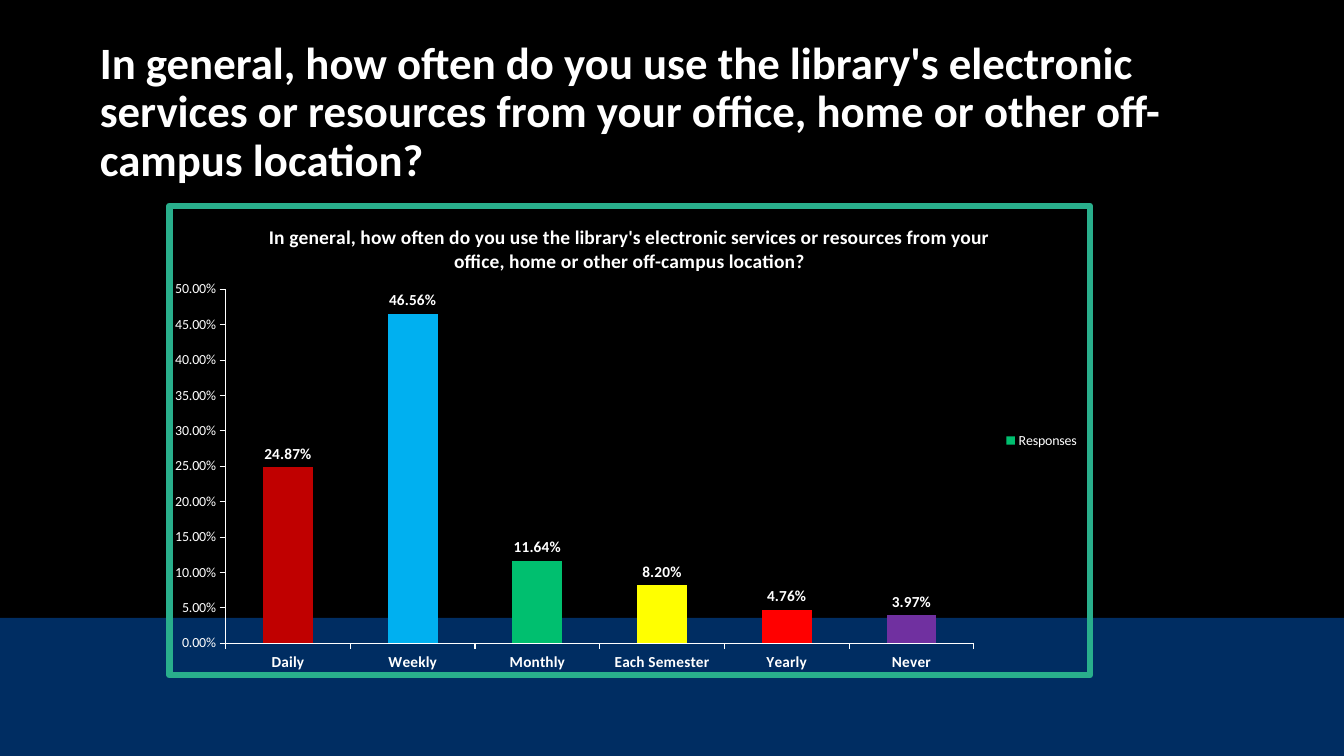
"""Build the library survey slide: a question and a column chart of the responses."""
from lxml import etree
from pptx import Presentation
from pptx import util as u
from pptx.chart.data import CategoryChartData
from pptx.dml.color import RGBColor
from pptx.enum import chart as ch, shapes, text
from pptx.oxml import parse_xml
from pptx.oxml.ns import nsdecls, qn


def paint(fill, color):
    fill.solid()
    fill.fore_color.rgb = RGBColor.from_string(color)


def style(font, size, bold):
    font.name = "Calibri"
    font.size = u.Pt(size)
    font.bold = bold
    paint(font.fill, WHITE)


WHITE = "FFFFFF"
QUESTION = ("In general, how often do you use the library's electronic services "
            "or resources from your office, home or other off-campus location?")
ANSWERS = [
    ("Daily", 0.2487, "C00000"),
    ("Weekly", 0.4656, "00B0F0"),
    ("Monthly", 0.1164, "00BF6F"),
    ("Each Semester", 0.082, "FFFF00"),
    ("Yearly", 0.0476, "FF0000"),
    ("Never", 0.0397, "7030A0"),
]

deck = Presentation()
deck.slide_width, deck.slide_height = u.Inches(13.33), u.Inches(7.5)
slide = deck.slides.add_slide(deck.slide_layouts[5])
paint(slide.background.fill, "000000")

band = slide.shapes.add_shape(shapes.MSO_SHAPE.RECTANGLE, 0, u.Inches(6.13),
                              deck.slide_width, u.Inches(1.37))
band.shadow.inherit = False
paint(band.fill, "002D62")
band.line.fill.background()

heading = slide.shapes.title
heading.left, heading.top = u.Inches(0.89), u.Inches(0.4)
heading.width, heading.height = u.Inches(11.53), u.Inches(1.45)
heading.text_frame.text = QUESTION
heading.text_frame.auto_size = text.MSO_AUTO_SIZE.NONE
heading.text_frame.vertical_anchor = text.MSO_ANCHOR.MIDDLE
question = heading.text_frame.paragraphs[0]
question.alignment = text.PP_ALIGN.LEFT
question.line_spacing = 0.9
style(question.font, 32, True)

survey = CategoryChartData(number_format="0.00%")
survey.categories = [answer for answer, share, color in ANSWERS]
survey.add_series("Responses", [share for answer, share, color in ANSWERS])
chart = slide.shapes.add_chart(
    ch.XL_CHART_TYPE.COLUMN_CLUSTERED, u.Inches(1.65), u.Inches(2.01),
    u.Inches(9.19), u.Inches(4.72), survey).chart
style(chart.font, 10, False)

chart.has_title = True
chart.chart_title.include_in_layout = False
chart.chart_title.text_frame.text = QUESTION
style(chart.chart_title.text_frame.paragraphs[0].font, 14, True)

chart.has_legend = True
chart.legend.position = ch.XL_LEGEND_POSITION.RIGHT
chart.legend.include_in_layout = False
style(chart.legend.font, 10, False)

frequency, share_axis = chart.category_axis, chart.value_axis
for axis, size, bold in ((frequency, 11, True), (share_axis, 10, False)):
    axis.has_major_gridlines = False
    axis.major_tick_mark = ch.XL_TICK_MARK.OUTSIDE
    axis.minor_tick_mark = ch.XL_TICK_MARK.NONE
    axis.format.line.width = u.Pt(0.75)
    paint(axis.format.line.fill, WHITE)
    style(axis.tick_labels.font, size, bold)
share_axis.minimum_scale, share_axis.maximum_scale = 0, 0.5
share_axis.major_unit = 0.05
share_axis.tick_labels.number_format = "0.00%"
share_axis.tick_labels.number_format_is_linked = False

columns = chart.plots[0]
columns.gap_width = 150
columns.vary_by_categories = False
responses = columns.series[0]
paint(responses.format.fill, "00BF6F")
for index, (answer, share, color) in enumerate(ANSWERS):
    paint(responses.points[index].format.fill, color)

labels = responses.data_labels
labels.show_value = True
labels.number_format = "0.00%"
labels.number_format_is_linked = False
labels.position = ch.XL_LABEL_POSITION.OUTSIDE_END
style(labels.font, 11, True)

plot_area = chart.element.find(".//" + qn("c:plotArea"))
for layout in plot_area.findall(qn("c:layout")):
    plot_area.remove(layout)
layout = etree.Element(qn("c:layout"))
manual = etree.SubElement(layout, qn("c:manualLayout"))
for tag, value in (("layoutTarget", "inner"), ("xMode", "edge"), ("yMode", "edge"),
                   ("x", "0.061"), ("y", "0.178"), ("w", "0.813"), ("h", "0.754")):
    etree.SubElement(manual, qn("c:" + tag)).set("val", value)
plot_area.insert(0, layout)

chart.element.find(qn("c:chart")).addnext(parse_xml(
    f'<c:spPr {nsdecls("c", "a")}><a:noFill/><a:ln w="{u.Pt(4.5)}">'
    '<a:solidFill><a:srgbClr val="29AF8C"/></a:solidFill></a:ln></c:spPr>'))

deck.save("out.pptx")
